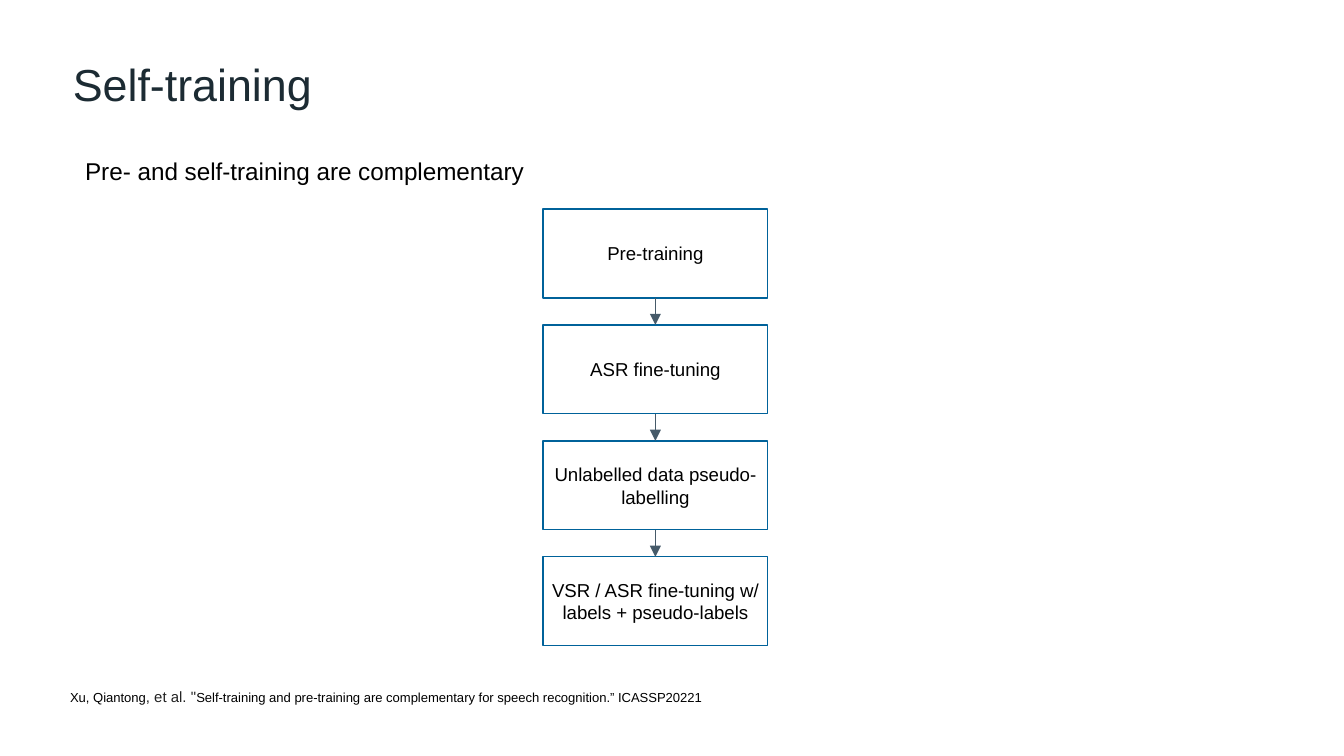
from dataclasses import dataclass

import pptx
import pptx.dml.color
import pptx.enum.shapes
import pptx.enum.text
import pptx.oxml
import pptx.oxml.ns
import pptx.util

Pt = pptx.util.Pt
PP_ALIGN = pptx.enum.text.PP_ALIGN
MSO_ANCHOR = pptx.enum.text.MSO_ANCHOR


@dataclass(frozen=True)
class Theme:
    font: str = "Arial"
    title: str = "1C2B33"
    text: str = "000000"
    muted: str = "222222"
    border: str = "00629A"
    arrow: str = "465A69"
    title_size: float = 24
    lead_size: float = 13
    box_size: float = 10
    cite_size: float = 7
    cite_mid_size: float = 8
    line_width: float = 0.75
    inset: float = 3.6


@dataclass(frozen=True)
class Box:
    left: float
    top: float
    width: float
    height: float


@dataclass(frozen=True)
class Step:
    label: str
    box: Box


THEME = Theme()
STEPS = [
    Step(label, Box(291, 112 + 62.1 * i, 120.2, 47.6))
    for i, label in enumerate([
        "Pre-training",
        "ASR fine-tuning",
        "Unlabelled data pseudo-labelling",
        "VSR / ASR fine-tuning w/ labels + pseudo-labels",
    ])
]


def rgb(color: str) -> pptx.dml.color.RGBColor:
    return pptx.dml.color.RGBColor.from_string(color)


def place(sp, box: Box) -> None:
    sp.left, sp.top = Pt(box.left), Pt(box.top)
    sp.width, sp.height = Pt(box.width), Pt(box.height)


def add_text(p, text: str, *, size: float, color: str = THEME.text) -> None:
    r = p.add_run()
    r.text = text
    r.font.name = THEME.font
    r.font.size = Pt(size)
    r.font.color.rgb = rgb(color)


def set_frame(tf, *, inset: float = THEME.inset, anchor=MSO_ANCHOR.TOP,
              align=PP_ALIGN.LEFT):
    """Format a text frame and return its first paragraph."""
    tf.word_wrap = True
    tf.auto_size = pptx.enum.text.MSO_AUTO_SIZE.NONE
    tf.vertical_anchor = anchor
    tf.margin_left = tf.margin_right = Pt(inset)
    tf.margin_top = tf.margin_bottom = Pt(inset)
    p = tf.paragraphs[0]
    p.alignment = align
    return p


def add_label(s, box: Box):
    sp = s.shapes.add_textbox(0, 0, 0, 0)
    place(sp, box)
    return set_frame(sp.text_frame)


def add_step(s, step: Step):
    sp = s.shapes.add_shape(pptx.enum.shapes.MSO_SHAPE.RECTANGLE, 0, 0, 0, 0)
    place(sp, step.box)
    sp.shadow.inherit = False
    sp.fill.background()
    sp.line.color.rgb = rgb(THEME.border)
    sp.line.width = Pt(THEME.line_width)
    p = set_frame(sp.text_frame, anchor=MSO_ANCHOR.MIDDLE, align=PP_ALIGN.CENTER)
    add_text(p, step.label, size=THEME.box_size)
    return sp


def add_arrow(s, upper, lower) -> None:
    cxn = s.shapes.add_connector(
        pptx.enum.shapes.MSO_CONNECTOR.STRAIGHT, 0, 0, 0, 0)
    cxn.begin_connect(upper, 2)
    cxn.end_connect(lower, 0)
    cxn.line.color.rgb = rgb(THEME.arrow)
    cxn.line.width = Pt(THEME.line_width)
    ln = cxn.line._get_or_add_ln()
    ln.append(pptx.oxml.parse_xml(
        f'<a:tailEnd {pptx.oxml.ns.nsdecls("a")} type="triangle"/>'))
    cxn._element.spPr.append(pptx.oxml.parse_xml(
        f'<a:effectLst {pptx.oxml.ns.nsdecls("a")}/>'))


def main() -> None:
    prs = pptx.Presentation()
    prs.slide_width, prs.slide_height = Pt(720), Pt(405)
    s = prs.slides.add_slide(prs.slide_layouts[5])

    # Title
    title = s.shapes.title
    place(title, Box(39, 23, 400, 66))
    p = set_frame(title.text_frame, inset=0)
    p.line_spacing = 1.25
    add_text(p, "Self-training", size=THEME.title_size, color=THEME.title)

    # Lead sentence
    p = add_label(s, Box(42, 80, 294.5, 23))
    add_text(p, "Pre- and self-training are complementary", size=THEME.lead_size)

    # Pipeline of steps, each joined to the next
    boxes = [add_step(s, step) for step in STEPS]
    for upper, lower in zip(boxes, boxes[1:]):
        add_arrow(s, upper, lower)

    # Citation
    p = add_label(s, Box(34, 365, 369.4, 17.3))
    add_text(p, "Xu, Qiantong", size=THEME.cite_size)
    add_text(p, ', et al. "', size=THEME.cite_mid_size, color=THEME.muted)
    add_text(p, "Self-training and pre-training are complementary for speech "
                "recognition.” ICASSP20221", size=THEME.cite_size)

    prs.save("out.pptx")


if __name__ == "__main__":
    main()
